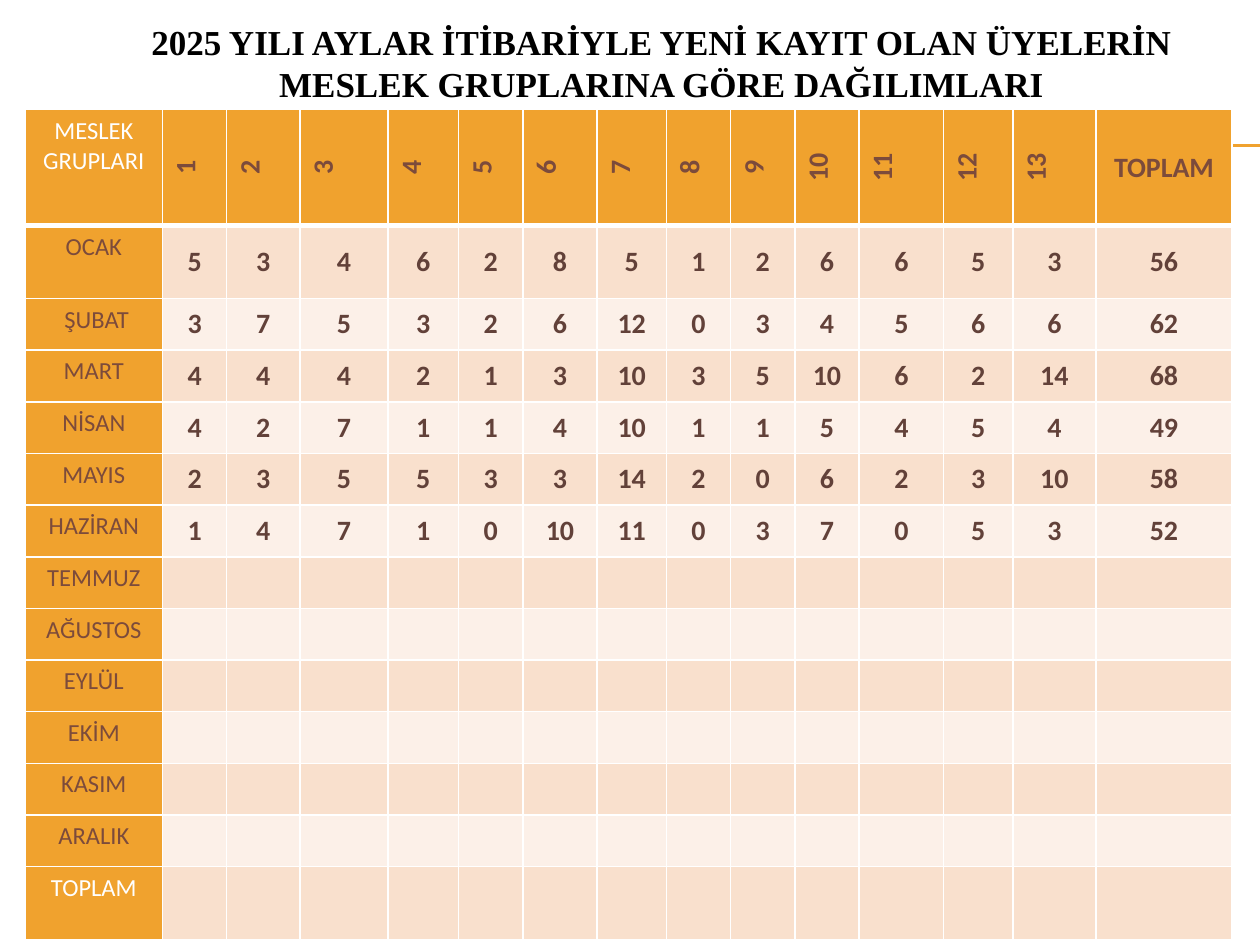
"""Build the slide of new member registrations by month and occupational group."""
from dataclasses import dataclass

from lxml import etree
from pptx import Presentation
from pptx.dml.color import RGBColor
from pptx.enum.shapes import MSO_CONNECTOR
from pptx.enum.text import MSO_ANCHOR, MSO_AUTO_SIZE, PP_ALIGN
from pptx.oxml.ns import qn
from pptx.util import Inches, Pt

STRAIGHT = MSO_CONNECTOR.STRAIGHT
CENTER = PP_ALIGN.CENTER
TOP, MIDDLE = MSO_ANCHOR.TOP, MSO_ANCHOR.MIDDLE
NO_AUTOFIT = MSO_AUTO_SIZE.NONE

ORANGE, BROWN, DARK_BROWN = "F0A22E", "7C4B3B", "624139"
BLACK, WHITE = "000000", "FFFFFF"
BANDS = ("F9E0CD", "FCF0E8")

TITLE = "2025 YILI AYLAR İTİBARİYLE YENİ KAYIT OLAN ÜYELERİN MESLEK GRUPLARINA GÖRE DAĞILIMLARI"
HEADERS = ["MESLEK GRUPLARI", *map(str, range(1, 14)), "TOPLAM"]
MONTHS = {
    "OCAK": [5, 3, 4, 6, 2, 8, 5, 1, 2, 6, 6, 5, 3, 56],
    " ŞUBAT": [3, 7, 5, 3, 2, 6, 12, 0, 3, 4, 5, 6, 6, 62],
    "MART": [4, 4, 4, 2, 1, 3, 10, 3, 5, 10, 6, 2, 14, 68],
    "NİSAN": [4, 2, 7, 1, 1, 4, 10, 1, 1, 5, 4, 5, 4, 49],
    "MAYIS": [2, 3, 5, 5, 3, 3, 14, 2, 0, 6, 2, 3, 10, 58],
    "HAZİRAN": [1, 4, 7, 1, 0, 10, 11, 0, 3, 7, 0, 5, 3, 52],
    "TEMMUZ": [],
    "AĞUSTOS": [],
    "EYLÜL": [],
    "EKİM": [],
    "KASIM": [],
    "ARALIK": [],
    "TOPLAM": [],
}
COLUMN_WIDTHS = [1.09, 0.51, 0.58, 0.7, 0.56, 0.51, 0.59, 0.55,
                 0.51, 0.51, 0.51, 0.67, 0.55, 0.66, 1.08]
ROW_HEIGHTS = [0.92, 0.58, *[0.41] * 11, 0.58]


@dataclass(frozen=True)
class CellStyle:
    """Look of one kind of table cell."""

    fill: str
    color: str
    size: int = 16
    bold: bool = True
    anchor: MSO_ANCHOR = MIDDLE
    vertical: bool = False
    bottom_border: int = 1


CORNER = CellStyle(ORANGE, WHITE, 14, False, TOP, bottom_border=3)
GROUP_NUMBER = CellStyle(ORANGE, BROWN, anchor=TOP, vertical=True, bottom_border=3)
TOTAL_HEADER = CellStyle(ORANGE, BROWN, bottom_border=3)
MONTH_LABEL = CellStyle(ORANGE, BROWN, 14, False, TOP)
TOTAL_LABEL = CellStyle(ORANGE, WHITE, 14, False, TOP)
VALUES = [CellStyle(band, DARK_BROWN) for band in BANDS]


def rgb(value: str) -> RGBColor:
    """Turn a hex string into a colour."""
    return RGBColor.from_string(value)


def format_paragraph(paragraph, color: str, **font_values) -> None:
    """Centre a paragraph and apply its font values."""
    paragraph.alignment = CENTER
    for name, value in font_values.items():
        setattr(paragraph.font, name, value)
    paragraph.font.color.rgb = rgb(color)


def add_borders(cell, bottom_width: int) -> None:
    """Give a cell white borders on all four sides."""
    properties = cell._tc.get_or_add_tcPr()
    for tag, width in (("lnL", 1), ("lnR", 1), ("lnT", 1), ("lnB", bottom_width)):
        line = etree.SubElement(properties, qn(f"a:{tag}"), w=str(Pt(width)))
        fill = etree.SubElement(line, qn("a:solidFill"))
        etree.SubElement(fill, qn("a:srgbClr"), val=WHITE)


def fill_cell(cell, text: str, style: CellStyle) -> None:
    """Write and style one table cell."""
    add_borders(cell, style.bottom_border)
    cell.fill.solid()
    cell.fill.fore_color.rgb = rgb(style.fill)
    cell.vertical_anchor = style.anchor
    if style.vertical:
        cell._tc.get_or_add_tcPr().set("vert", "vert270")
    cell.text = text
    format_paragraph(cell.text_frame.paragraphs[0], style.color,
                     name="Calibri", size=Pt(style.size), bold=style.bold)


def cell_style(row: int, column: int) -> CellStyle:
    """Choose the style that belongs to a table position."""
    last_row, last_column = len(ROW_HEIGHTS) - 1, len(COLUMN_WIDTHS) - 1
    if row == 0:
        return {0: CORNER, last_column: TOTAL_HEADER}.get(column, GROUP_NUMBER)
    if column == 0:
        return TOTAL_LABEL if row == last_row else MONTH_LABEL
    return VALUES[(row - 1) % 2]


def add_title(slide) -> None:
    """Place and format the slide title."""
    title = slide.shapes.title
    box = {"left": 0.5, "top": 0, "width": 9.5, "height": 0.99}
    for name, value in box.items():
        setattr(title, name, Inches(value))
    frame = title.text_frame
    frame.text = TITLE
    frame.word_wrap = True
    frame.auto_size = NO_AUTOFIT
    frame.vertical_anchor = MIDDLE
    format_paragraph(frame.paragraphs[0], BLACK,
                     name="Times New Roman", size=Pt(20), bold=True)


def add_rule(slide, top: float) -> None:
    """Draw a thin orange line to the right edge of the slide."""
    rule = slide.shapes.add_connector(
        STRAIGHT, Inches(0.56), Inches(top), Inches(10), Inches(top))
    rule.line.color.rgb = rgb(ORANGE)
    rule.line.width = Pt(0.75)
    etree.SubElement(rule._element.spPr, qn("a:effectLst"))


def add_member_table(slide) -> None:
    """Add the table of months against occupational groups."""
    table = slide.shapes.add_table(
        len(ROW_HEIGHTS), len(COLUMN_WIDTHS), Inches(0.2), Inches(0.87),
        Inches(sum(COLUMN_WIDTHS)), Inches(sum(ROW_HEIGHTS))).table
    table.horz_banding = False
    for column, width in zip(table.columns, COLUMN_WIDTHS):
        column.width = Inches(width)
    for row, height in zip(table.rows, ROW_HEIGHTS):
        row.height = Inches(height)
    rows = [HEADERS, *([month, *map(str, values)] for month, values in MONTHS.items())]
    for row, texts in enumerate(rows):
        for column in range(len(COLUMN_WIDTHS)):
            text = texts[column] if column < len(texts) else ""
            fill_cell(table.cell(row, column), text, cell_style(row, column))


def main() -> None:
    """Build and save the presentation."""
    presentation = Presentation()
    presentation.slide_width, presentation.slide_height = Inches(10), Inches(7.5)
    slide = presentation.slides.add_slide(presentation.slide_layouts[5])
    add_title(slide)
    for top in (1.15, 1.16):
        add_rule(slide, top)
    add_member_table(slide)
    presentation.save("out.pptx")


if __name__ == "__main__":
    main()
